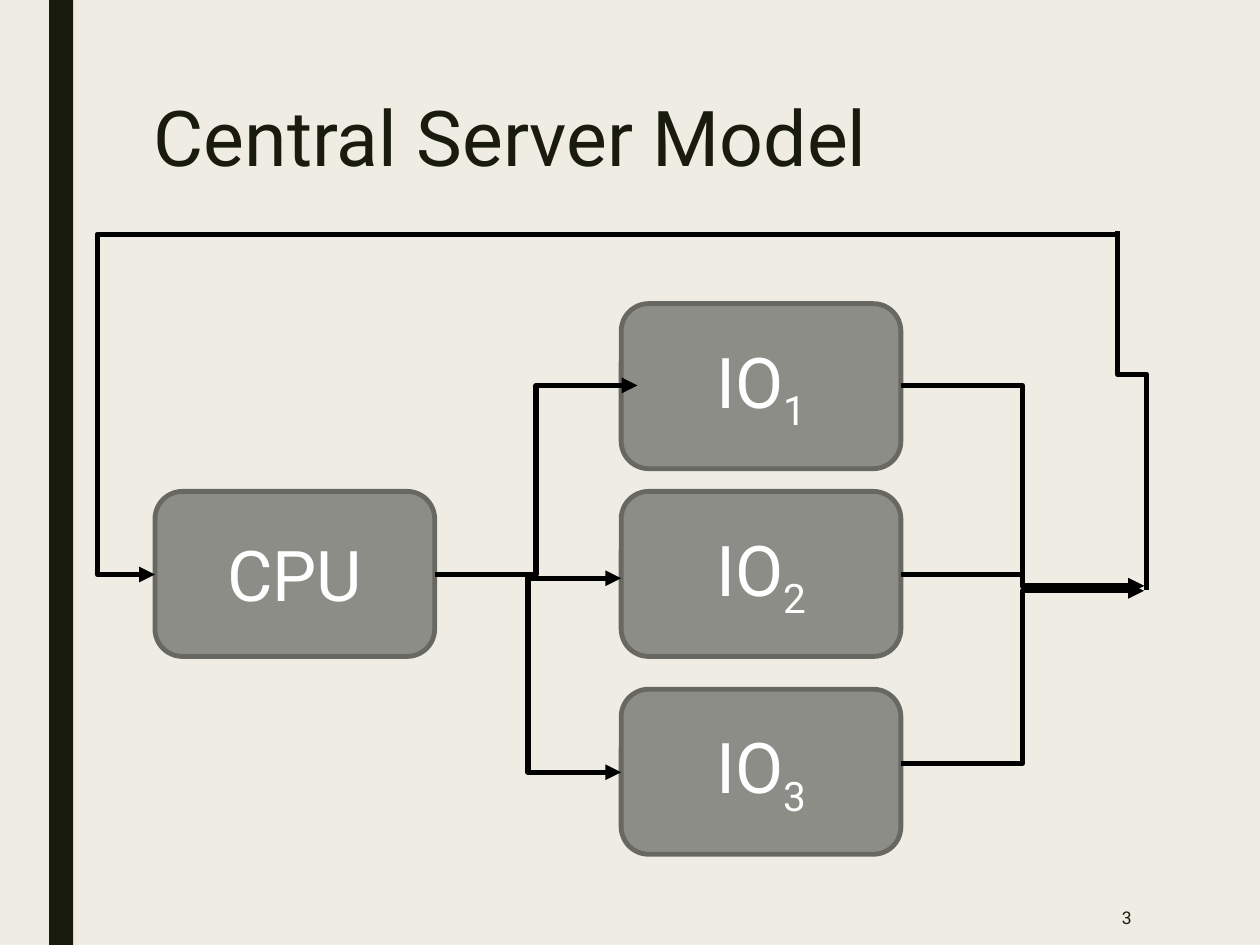
from pptx import Presentation
from pptx.dml.color import RGBColor
from pptx.enum.shapes import MSO_CONNECTOR, MSO_SHAPE
from pptx.enum.text import MSO_ANCHOR, MSO_AUTO_SIZE, PP_ALIGN
from pptx.oxml.ns import qn
from pptx.util import Inches, Pt
from lxml.etree import SubElement

PAPER = RGBColor(0xEF, 0xED, 0xE3)
INK = RGBColor(0x19, 0x1B, 0x0E)
GRAY = RGBColor(0x8C, 0x8D, 0x86)
EDGE = RGBColor(0x68, 0x68, 0x63)
WHITE = RGBColor(0xFF, 0xFF, 0xFF)
BLACK = RGBColor(0, 0, 0)


class Board:
    font = "Roboto"
    node_w, node_h = 2.22, 1.31

    def __init__(self, slide):
        self.slide = slide
        slide.background.fill.solid()
        slide.background.fill.fore_color.rgb = PAPER

    def style(self, para, size, color, align):
        para.alignment = align
        para.font.name = self.font
        para.font.size = Pt(size)
        para.font.color.rgb = color

    def title(self, text, left, top, width, height):
        shape = self.slide.shapes.title
        shape.left, shape.top = Inches(left), Inches(top)
        shape.width, shape.height = Inches(width), Inches(height)
        frame = shape.text_frame
        frame.text = text
        frame.auto_size = MSO_AUTO_SIZE.NONE
        frame.vertical_anchor = MSO_ANCHOR.TOP
        para = frame.paragraphs[0]
        para.line_spacing = 0.89
        self.style(para, 44, INK, PP_ALIGN.LEFT)

    def number(self, text, left, top, width, height):
        box = self.slide.shapes.add_textbox(
            Inches(left), Inches(top), Inches(width), Inches(height))
        frame = box.text_frame
        frame.word_wrap = True
        frame.vertical_anchor = MSO_ANCHOR.MIDDLE
        frame.text = text
        self.style(frame.paragraphs[0], 10, INK, PP_ALIGN.RIGHT)

    def block(self, kind, left, top, width, height, fill):
        shape = self.slide.shapes.add_shape(
            kind, Inches(left), Inches(top), Inches(width), Inches(height))
        shape.shadow.inherit = False
        shape.fill.solid()
        shape.fill.fore_color.rgb = fill
        shape.line.fill.background()
        return shape

    def node(self, left, top, text, sub=""):
        shape = self.block(MSO_SHAPE.ROUNDED_RECTANGLE, left, top,
                           self.node_w, self.node_h, GRAY)
        shape.line.color.rgb = EDGE
        shape.line.width = Pt(2.75)
        frame = shape.text_frame
        frame.vertical_anchor = MSO_ANCHOR.MIDDLE
        para = frame.paragraphs[0]
        para.add_run().text = text
        if sub:
            run = para.add_run()
            run.text = sub
            run.font._element.set("baseline", "-25000")
        self.style(para, 40, WHITE, PP_ALIGN.CENTER)

    def elbow(self, start, end, bend=0.5, turn=0, arrow=True):
        """Draw a bent line; turn is its rotation of 0, 180 or 270 degrees."""
        mid_x, mid_y = (start[0] + end[0]) / 2, (start[1] + end[1]) / 2
        dx, dy = start[0] - mid_x, start[1] - mid_y
        dx, dy = {0: (dx, dy), 180: (-dx, -dy), 270: (-dy, dx)}[turn]
        line = self.slide.shapes.add_connector(
            MSO_CONNECTOR.ELBOW, Inches(mid_x + dx), Inches(mid_y + dy),
            Inches(mid_x - dx), Inches(mid_y - dy))
        line.line.color.rgb = BLACK
        line.line.width = Pt(3)
        props = line._element.spPr
        if turn:
            props.find(qn("a:xfrm")).set("rot", str(turn * 60000))
        geom = props.find(qn("a:prstGeom"))
        guides = geom.find(qn("a:avLst"))
        if guides is None:
            guides = SubElement(geom, qn("a:avLst"))
        SubElement(guides, qn("a:gd"), name="adj1",
                   fmla=f"val {round(bend * 100000)}")
        if arrow:
            SubElement(props.find(qn("a:ln")), qn("a:tailEnd"), type="triangle")
        SubElement(props, qn("a:effectLst"))


def main():
    deck = Presentation()
    deck.slide_width, deck.slide_height = Inches(10), Inches(7.5)
    board = Board(deck.slides.add_slide(deck.slide_layouts[5]))

    board.block(MSO_SHAPE.RECTANGLE, 0.39, 0, 0.19, 7.5, INK)
    board.title("Central Server Model", 1.12, 0.75, 7.88, 1.11)
    board.number("3", 7.77, 7.06, 1.31, 0.44)

    cpu_x, io_x, mid = 1.23, 4.93, 4.56
    board.node(cpu_x, 3.9, "CPU")
    for sub, top in enumerate((2.41, 3.9, 5.47), 1):
        board.node(io_x, top, "IO", str(sub))

    for end in ((5.06, 3.06), (io_x, 4.59), (io_x, 6.13)):
        board.elbow((cpu_x + board.node_w, mid), end)
    for y, end_y in ((3.06, 4.65), (mid, 4.65), (6.06, 4.69)):
        board.elbow((io_x + board.node_w, y), (9.08, end_y))

    board.elbow((8.87, 1.86), (cpu_x, mid), bend=1.06, turn=180)
    board.elbow((9.1, 4.68), (8.87, 1.83), bend=0.6, turn=270, arrow=False)
    deck.save("out.pptx")


if __name__ == "__main__":
    main()
